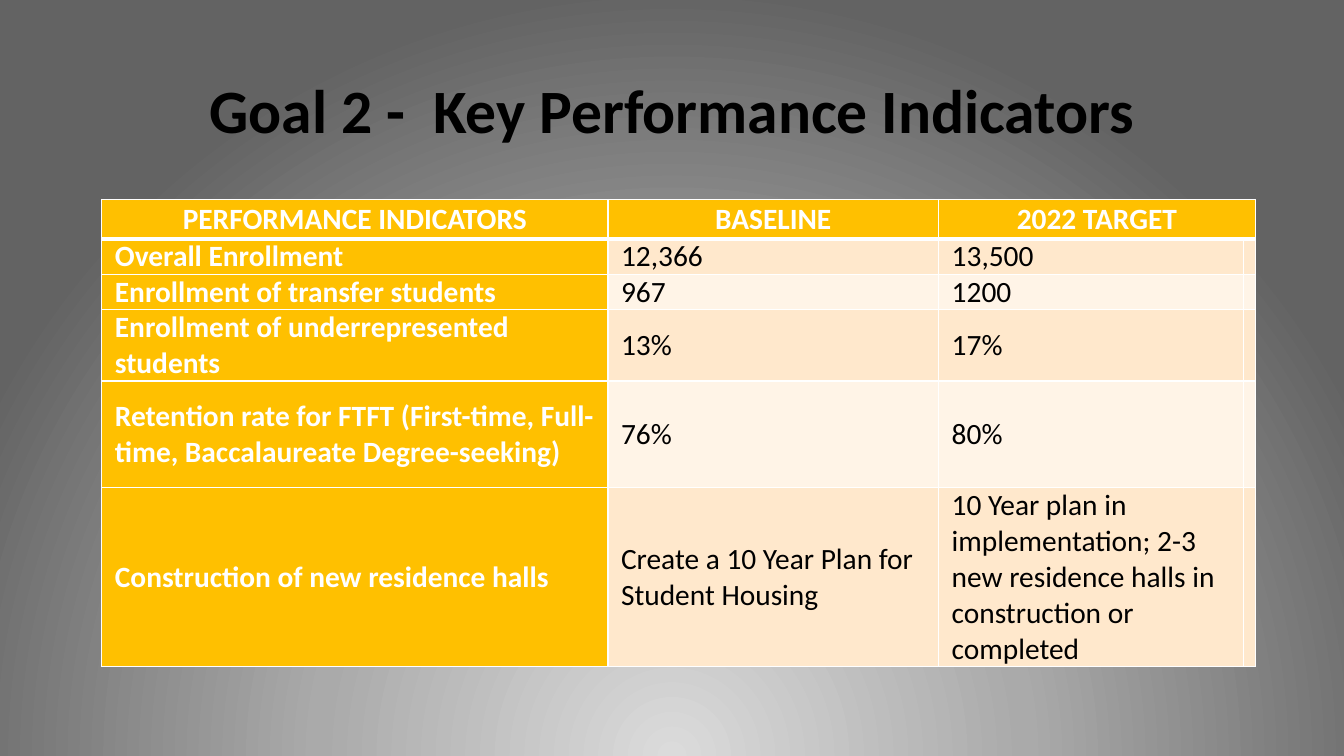
import pptx
import pptx.dml.color
import pptx.enum.text
import pptx.oxml
import pptx.oxml.ns
import pptx.util
from pptx.util import Inches

COLORS = {
    "glow": "DBDBDB", "middle": "AAAAAA", "edge": "636363",
    "black": "000000", "white": "FFFFFF", "shadow": "4A3030",
    "gold": "FFC000", "band": "FFE8CC", "pale": "FFF4E7",
}
ALIGN = pptx.enum.text.PP_ALIGN
MIDDLE = pptx.enum.text.MSO_ANCHOR.MIDDLE

HEADER = ["PERFORMANCE INDICATORS", "BASELINE", "2022 TARGET", ""]
INDICATORS = [
    ["Overall Enrollment", "12,366", "13,500", ""],
    ["Enrollment of transfer students", "967", "1200", ""],
    ["Enrollment of underrepresented students", "13%", "17%", ""],
    ["Retention rate for FTFT (First-time, Full-time, Baccalaureate Degree-seeking)",
     "76%", "80%", ""],
    ["Construction of new residence halls", "Create a 10 Year Plan for Student Housing",
     "10 Year plan in implementation; 2-3 new residence halls in construction or completed", ""],
]
COLUMN_WIDTHS = [5.02, 3.28, 3.02, 0.12]
ROW_HEIGHTS = [0.39, 0.35, 0.35, 0.71, 1.06, 1.77]


def xml(tag, attributes="", content=""):
    """Build one element in the drawing namespace."""
    namespace = pptx.oxml.ns.nsdecls("a")
    return pptx.oxml.parse_xml(f"<a:{tag} {namespace} {attributes}>{content}</a:{tag}>")


def color_xml(name, content=""):
    return f'<a:srgbClr val="{COLORS[name]}">{content}</a:srgbClr>'


class SlideBuilder:
    font = "Calibri"

    def __init__(self, page):
        self.page = page

    def rgb(self, name):
        return pptx.dml.color.RGBColor.from_string(COLORS[name])

    def background(self, stops):
        """Radial gradient centred below the bottom edge."""
        fill = self.page.background.fill
        fill.gradient()
        stop_list = "".join(f'<a:gs pos="{position * 1000}">{color_xml(name)}</a:gs>'
                            for position, name in stops)
        gradient = xml("gradFill", 'rotWithShape="1"',
                       f'<a:gsLst>{stop_list}</a:gsLst><a:path path="circle">'
                       '<a:fillToRect l="50000" t="130000" r="50000" b="-30000"/></a:path>')
        old = self.page.background._cSld.find(".//" + pptx.oxml.ns.qn("a:gradFill"))
        old.getparent().replace(old, gradient)

    def set_text(self, para, text, size, color, bold, align):
        para.text = text
        para.alignment = align
        font = para.font
        font.name, font.size, font.bold = self.font, pptx.util.Pt(size), bold
        font.color.rgb = self.rgb(color)

    def title(self, text, left, top, width, height):
        box = self.page.shapes.add_textbox(
            Inches(left), Inches(top), Inches(width), Inches(height))
        frame = box.text_frame
        frame.word_wrap = True
        frame.vertical_anchor = MIDDLE
        para = frame.paragraphs[0]
        self.set_text(para, text, 44, "black", True, ALIGN.CENTER)
        para.line_spacing = 0.9
        # Soft text shadow
        shadow = color_xml("shadow", '<a:alpha val="60000"/>')
        span = para.runs[0]
        span.font.color.rgb = self.rgb("black")
        span.font._element.append(xml(
            "effectLst", "", '<a:outerShdw blurRad="38100" dist="38100" dir="2700000" '
            f'algn="tl">{shadow}</a:outerShdw>'))

    def borders(self, cell, top, bottom):
        properties = cell._tc.get_or_add_tcPr()
        sides = {"lnL": 1, "lnR": 1, "lnT": top, "lnB": bottom}
        for index, (side, points) in enumerate(sides.items()):
            properties.insert(index, xml(side, f'w="{pptx.util.Pt(points)}"',
                                         f'<a:solidFill>{color_xml("white")}</a:solidFill>'))

    def cell(self, cell, text, row, column):
        header = row == 0
        label = header or column == 0
        cell.fill.solid()
        cell.fill.fore_color.rgb = self.rgb("gold" if label else "band" if row % 2 else "pale")
        cell.vertical_anchor = MIDDLE
        cell.margin_left = cell.margin_right = Inches(0.02 if header else 0.13 if text else 0)
        cell.margin_top = cell.margin_bottom = Inches(0.02 if header else 0)
        self.set_text(cell.text_frame.paragraphs[0], text, 21, "white" if label else "black",
                      label, ALIGN.CENTER if header else ALIGN.LEFT)
        self.borders(cell, 3 if row == 1 else 1, 3 if header else 1)

    def table(self, rows, left, top, widths, heights):
        frame = self.page.shapes.add_table(
            len(rows), len(widths), Inches(left), Inches(top),
            Inches(sum(widths)), Inches(sum(heights)))
        table = frame.table
        for column, width in zip(table.columns, widths):
            column.width = Inches(width)
        for line, height in zip(table.rows, heights):
            line.height = Inches(height)
        for row, texts in enumerate(rows):
            for column, text in enumerate(texts):
                self.cell(table.cell(row, column), text, row, column)
        # The last heading covers the narrow end column
        table.cell(0, 2).merge(table.cell(0, 3))


def main():
    deck = pptx.Presentation()
    deck.slide_width, deck.slide_height = Inches(13.33), Inches(7.5)
    builder = SlideBuilder(deck.slides.add_slide(deck.slide_layouts[6]))

    # Background and heading
    builder.background([(0, "glow"), (46, "middle"), (100, "edge")])
    builder.title("Goal 2 -  Key Performance Indicators", 0.92, 0.4, 11.5, 1.45)

    # Indicator table
    builder.table([HEADER] + INDICATORS, 1.01, 1.98, COLUMN_WIDTHS, ROW_HEIGHTS)

    deck.save("out.pptx")


if __name__ == "__main__":
    main()
